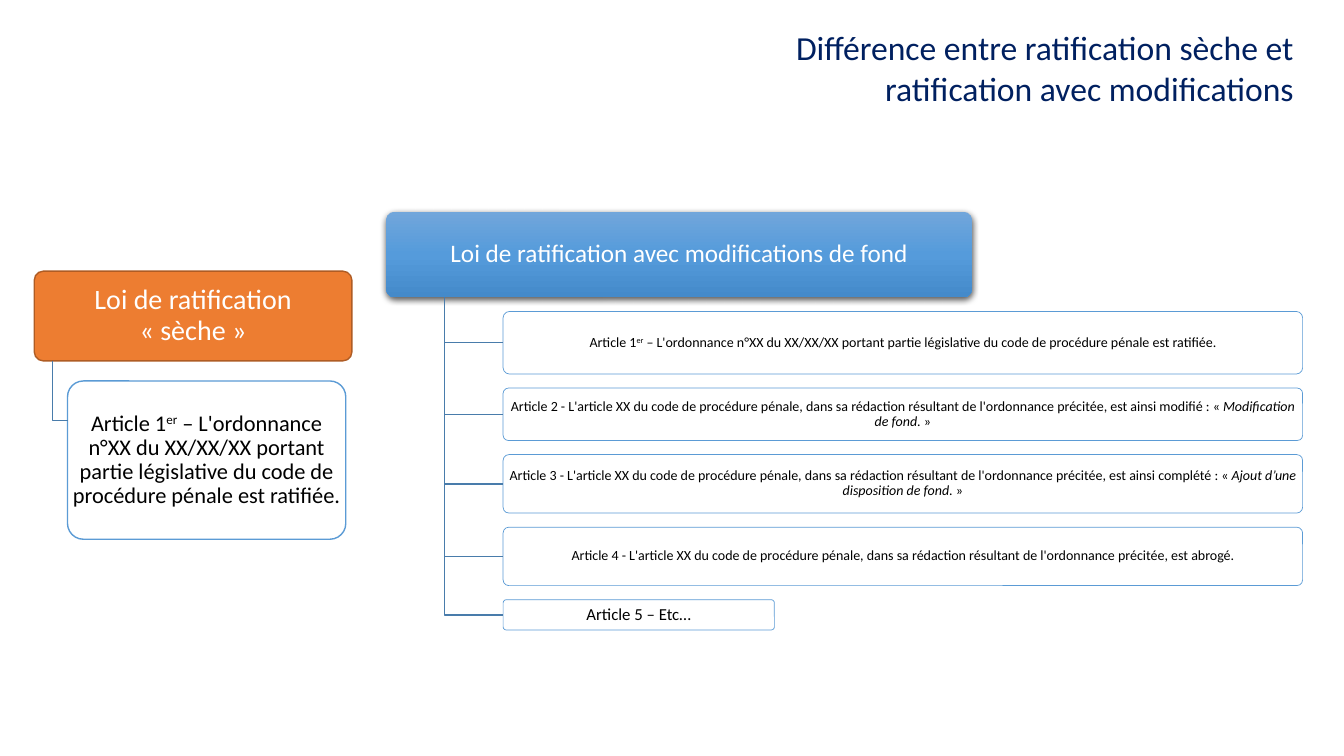
import dataclasses
from typing import Optional

import pptx
import pptx.dml.color
import pptx.enum.shapes
import pptx.enum.text
import pptx.oxml
import pptx.oxml.ns
import pptx.util

Inches = pptx.util.Inches
Pt = pptx.util.Pt
NAMESPACE = pptx.oxml.ns.nsdecls("a")
FONT = "Calibri"
WHITE, BLACK, NAVY = "FFFFFF", "000000", "002060"
ORANGE, BROWN, BLUE, LINK_BLUE = "ED7D31", "AF5C24", "5B9BD5", "497CAB"
NO_BREAK_SPACE = chr(160)


@dataclasses.dataclass(frozen=True)
class Span:
    text: str
    italic: bool = False
    superscript: bool = False


@dataclasses.dataclass(frozen=True)
class Card:
    left: float
    top: float
    width: float
    height: float
    spans: tuple[Span, ...]
    size: float
    margin: float
    color: str = BLACK
    fill: str = WHITE
    line: Optional[str] = BLUE
    line_width: float = 1


@dataclasses.dataclass(frozen=True)
class Article:
    spans: tuple[Span, ...]
    height: float
    width: float = 7.93
    size: float = 10
    margin: float = 0.02


def rgb(value: str) -> pptx.dml.color.RGBColor:
    return pptx.dml.color.RGBColor.from_string(value)


def add_span(para, span: Span, size: float, color: str) -> None:
    run = para.add_run()
    run.text = span.text
    run.font.name = FONT
    run.font.size = Pt(size)
    run.font.color.rgb = rgb(color)
    if span.italic:
        run.font.italic = True
    if span.superscript:
        run.font._element.set("baseline", "30000")


def add_title(page, text: str) -> None:
    title = page.shapes.title
    title.left, title.top = Inches(6.56), Inches(0.22)
    title.width, title.height = Inches(6.37), Inches(0.91)
    frame = title.text_frame
    frame.word_wrap = True
    frame.auto_size = pptx.enum.text.MSO_AUTO_SIZE.SHAPE_TO_FIT_TEXT
    frame.vertical_anchor = pptx.enum.text.MSO_ANCHOR.TOP
    para = frame.paragraphs[0]
    para.alignment = pptx.enum.text.PP_ALIGN.RIGHT
    add_span(para, Span(text), 24, NAVY)


def add_card(page, card: Card):
    box = page.shapes.add_shape(
        pptx.enum.shapes.MSO_SHAPE.ROUNDED_RECTANGLE,
        Inches(card.left), Inches(card.top), Inches(card.width), Inches(card.height),
    )
    box.adjustments[0] = 0.1
    box.shadow.inherit = False
    box.fill.solid()
    box.fill.fore_color.rgb = rgb(card.fill)
    if card.line:
        box.line.color.rgb = rgb(card.line)
        box.line.width = Pt(card.line_width)
    else:
        box.line.fill.background()
    frame = box.text_frame
    frame.word_wrap = True
    frame.vertical_anchor = pptx.enum.text.MSO_ANCHOR.MIDDLE
    frame.margin_left = frame.margin_right = Inches(card.margin)
    frame.margin_top = frame.margin_bottom = Inches(card.margin)
    para = frame.paragraphs[0]
    para.alignment = pptx.enum.text.PP_ALIGN.CENTER
    para.line_spacing = 0.9
    for span in card.spans:
        add_span(para, span, card.size, card.color)
    return box


def add_relief(box, colors: tuple[str, str, str]) -> None:
    stops = "".join(
        f'<a:gs pos="{index * 50000}"><a:srgbClr val="{color}"/></a:gs>'
        for index, color in enumerate(colors)
    )
    gradient = pptx.oxml.parse_xml(
        f'<a:gradFill {NAMESPACE} rotWithShape="1"><a:gsLst>{stops}</a:gsLst>'
        '<a:lin ang="5400000" scaled="0"/></a:gradFill>'
    )
    shadow = pptx.oxml.parse_xml(
        f'<a:outerShdw {NAMESPACE} blurRad="{Pt(4.5)}" dist="{Pt(1.5)}" dir="5400000" '
        'algn="ctr" rotWithShape="0"><a:srgbClr val="000000"><a:alpha val="63000"/>'
        '</a:srgbClr></a:outerShdw>'
    )
    properties = box._element.spPr
    properties.replace(properties.find(pptx.oxml.ns.qn("a:solidFill")), gradient)
    properties.find(pptx.oxml.ns.qn("a:effectLst")).append(shadow)


def add_elbow(page, header, child, trunk: float, drop: float) -> None:
    trunk_left = Inches(trunk)
    level = child.top + round(child.height * drop)
    builder = page.shapes.build_freeform(trunk_left, header.top + header.height)
    builder.add_line_segments([(trunk_left, level), (child.left, level)], close=False)
    elbow = builder.convert_to_shape()
    elbow.shadow.inherit = False
    elbow.fill.background()
    elbow.line.color.rgb = rgb(LINK_BLUE)
    elbow.line.width = Pt(1)


FIRST_ARTICLE = (
    Span("Article 1"),
    Span("er", superscript=True),
    Span(" – L'ordonnance n°XX du XX/XX/XX portant partie législative du code de procédure pénale est ratifiée."),
)
AMENDED = "L'article XX du code de procédure pénale, dans sa rédaction résultant de l'ordonnance précitée, est"
ARTICLES = (
    Article(FIRST_ARTICLE, 0.62),
    Article((Span(f"Article 2 - {AMENDED} ainsi modifié : « "),
             Span("Modification de fond.", italic=True), Span(" »")), 0.52),
    Article((Span(f"Article 3 - {AMENDED} ainsi complété : « "),
             Span("Ajout d’une disposition de fond.", italic=True), Span(" »")), 0.58),
    Article((Span(f"Article 4 - {AMENDED} abrogé."),), 0.58),
    Article((Span("Article 5 – Etc…"),), 0.3, width=2.69, size=12, margin=0.03),
)
ARTICLE_GAP = 0.14


def main() -> None:
    deck = pptx.Presentation()
    deck.slide_width, deck.slide_height = Inches(13.33), Inches(7.5)
    page = deck.slides.add_slide(deck.slide_layouts[5])
    add_title(page, "Différence entre ratification sèche et ratification avec modifications")

    dry_name = f"Loi de ratification «{NO_BREAK_SPACE}sèche{NO_BREAK_SPACE}»"
    dry_header = add_card(page, Card(
        0.34, 2.69, 3.15, 0.89, (Span(dry_name),),
        20, 0.03, color=WHITE, fill=ORANGE, line=BROWN))
    dry_article = add_card(page, Card(0.67, 3.78, 2.76, 1.57, FIRST_ARTICLE, 16, 0))
    add_elbow(page, dry_header, dry_article, 0.52, 0.25)

    amended_header = add_card(page, Card(
        3.83, 2.1, 5.81, 0.85, (Span("Loi de ratification avec modifications de fond"),),
        18, 0.04, color=WHITE, fill=BLUE, line=None))
    add_relief(amended_header, ("71A6DB", "559BDB", "448ACA"))
    top = 3.09
    for article in ARTICLES:
        box = add_card(page, Card(
            4.99, top, article.width, article.height, article.spans,
            article.size, article.margin, line_width=0.5))
        add_elbow(page, amended_header, box, 4.41, 0.5)
        top += article.height + ARTICLE_GAP

    deck.save("out.pptx")


if __name__ == "__main__":
    main()
